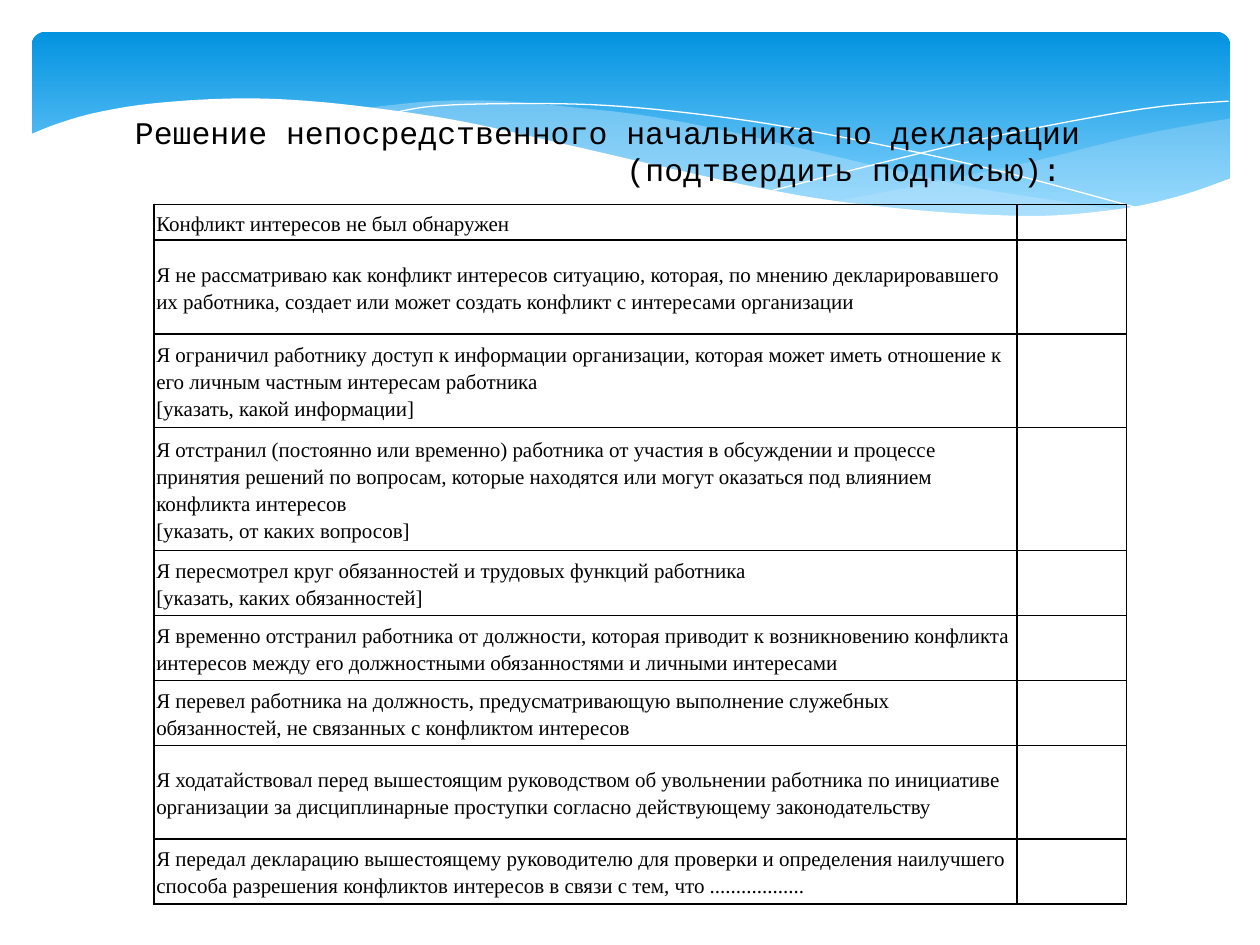
from lxml.etree import SubElement
from pptx import Presentation
from pptx.dml.color import RGBColor
from pptx.enum.shapes import MSO_SHAPE as Preset
from pptx.enum.text import MSO_ANCHOR as Anchor
from pptx.oxml import parse_xml
from pptx.oxml.ns import nsdecls, qn
from pptx.util import Cm, Pt

COLORS = {"deep": "0293E0", "sky": "83D3FE", "pale": "C6E7FC", "white": "FFFFFF", "ink": "000000"}

# Wave edges in cm from the top left corner of the banner
RIGHT_WAVE_TOP = [(24.16, 1.75), (23.11, 1.93), (22, 2.16), (20.5, 2.54), (19.15, 2.84),
                  (17.88, 3.1), (16.15, 3.43)]
RIGHT_WAVE_BOTTOM = [(16.15, 3.43), (17.27, 3.56), (18.29, 3.66), (19.76, 3.73), (20.8, 3.71),
                     (21.95, 3.58), (23.11, 3.33), (24.16, 2.95)]
MIDDLE_WAVE_TOP = [(22.05, 3.61), (20.62, 3.4), (19.05, 3.15), (17.3, 2.77), (15.34, 2.31),
                   (13.82, 1.96), (12.42, 1.7), (11.18, 1.55), (9.5, 1.4), (8.1, 1.4), (6.63, 1.55)]
MIDDLE_WAVE_BOTTOM = [(6.63, 1.55), (8.05, 1.75), (9.63, 2.06), (11.84, 2.57), (13.74, 3),
                      (15.47, 3.33), (17.02, 3.56), (18.69, 3.71), (20.14, 3.76), (21.13, 3.71),
                      (22.05, 3.61)]
FALLING_LINE = [(7.21, 1.65), (8.1, 1.5), (9.55, 1.45), (11.28, 1.47), (12.9, 1.6), (14.81, 1.85),
                (17.02, 2.26), (19.56, 2.82), (22.4, 3.58)]
RISING_LINE = [(14.94, 3.2), (17.02, 2.67), (19.08, 2.18), (21.36, 1.73), (22.83, 1.5), (24.13, 1.4)]
WHITE_WAVE_TOP = [(24.18, 2.95), (23.24, 3.28), (22.2, 3.53), (20.96, 3.68), (19.91, 3.71),
                  (18.26, 3.63), (16.33, 3.43), (14.68, 3.15), (12.8, 2.74), (10.72, 2.26),
                  (8.64, 1.8), (6.78, 1.52), (5.21, 1.37), (3.86, 1.35), (2.39, 1.45), (1.3, 1.63),
                  (0.53, 1.85), (-0.05, 2.08)]
WHITE_WAVE_BASE = [(-0.05, 5.05), (24.18, 5.05)]

# Row height in cm and the paragraphs of its first cell
DECISIONS = [
    (0.72, ["Конфликт интересов не был обнаружен"]),
    (1.89, ["Я не рассматриваю как конфликт интересов ситуацию, которая, по мнению декларировавшего "
            "их работника, создает или может создать конфликт с интересами организации"]),
    (1.89, ["Я ограничил работнику доступ к информации организации, которая может иметь отношение к "
            "его личным частным интересам работника", "[указать, какой информации]"]),
    (2.48, ["Я отстранил (постоянно или временно) работника от участия в обсуждении и процессе "
            "принятия решений по вопросам, которые находятся или могут оказаться под влиянием "
            "конфликта интересов", "[указать, от каких вопросов]"]),
    (1.31, ["Я пересмотрел круг обязанностей и трудовых функций работника",
            "[указать, каких обязанностей]"]),
    (1.31, ["Я временно отстранил работника от должности, которая приводит к возникновению конфликта "
            "интересов между его должностными обязанностями и личными интересами"]),
    (1.31, ["Я перевел работника на должность, предусматривающую выполнение служебных "
            "обязанностей, не связанных с конфликтом интересов"]),
    (1.88, ["Я ходатайствовал перед вышестоящим руководством об увольнении работника по инициативе "
            "организации за дисциплинарные проступки согласно действующему законодательству"]),
    (1.31, ["Я передал декларацию вышестоящему руководителю для проверки и определения наилучшего "
            "способа разрешения конфликтов интересов в связи с тем, что .................."]),
]


def rgb(name):
    return RGBColor.from_string(COLORS[name])


def smooth(points, steps=6):
    """Catmull-Rom curve through the points."""
    ends = [points[0], *points, points[-1]]
    curve = [points[0]]
    for a, b, c, d in zip(ends, ends[1:], ends[2:], ends[3:]):
        for step in range(1, steps + 1):
            t = step / steps
            curve.append(tuple(
                (2 * q + (r - p) * t + (2 * p - 5 * q + 4 * r - s) * t ** 2
                 + (3 * q - p - 3 * r + s) * t ** 3) / 2
                for p, q, r, s in zip(a, b, c, d)))
    return curve


def add_outline(page, left, top, points, close):
    start, *rest = [(Cm(left + x), Cm(top + y)) for x, y in points]
    builder = page.shapes.build_freeform(*start)
    builder.add_line_segments(rest, close=close)
    shape = builder.convert_to_shape()
    shape.shadow.inherit = False
    return shape


def add_wave(page, left, top, points, color, opacity=100):
    wave = add_outline(page, left, top, points, close=True)
    wave.fill.solid()
    wave.fill.fore_color.rgb = rgb(color)
    wave.line.fill.background()
    if opacity < 100:
        tint = wave.fill._xPr.find(".//" + qn("a:srgbClr"))
        SubElement(tint, qn("a:alpha"), val=str(opacity * 1000))


def add_banner(page, left, top, width, height):
    box = page.shapes.add_shape(Preset.ROUNDED_RECTANGLE, Cm(left), Cm(top), Cm(width), Cm(height))
    box.adjustments[0] = 0.07
    box.shadow.inherit = False
    box.line.fill.background()
    box.fill.gradient()
    box.fill.gradient_angle = 270
    for stop, color, position in zip(box.fill.gradient_stops, ("deep", "sky"), (0, 0.9)):
        stop.color.rgb = rgb(color)
        stop.position = position

    add_wave(page, left, top, smooth(RIGHT_WAVE_TOP) + smooth(RIGHT_WAVE_BOTTOM), "pale", 29)
    add_wave(page, left, top, smooth(MIDDLE_WAVE_TOP) + smooth(MIDDLE_WAVE_BOTTOM), "pale", 40)
    for points in (FALLING_LINE, RISING_LINE):
        curve = add_outline(page, left, top, smooth(points), close=False)
        curve.fill.background()
        curve.line.color.rgb = rgb("white")
        curve.line.width = Pt(0)
    add_wave(page, left, top, smooth(WHITE_WAVE_TOP) + WHITE_WAVE_BASE, "white")


def add_span(para, text, font, size):
    span = para.add_run()
    span.text = text
    span.font.name = font
    span.font.size = Pt(size)
    span.font.color.rgb = rgb("ink")


def add_title(page, left, top, width, height):
    box = page.shapes.add_textbox(Cm(left), Cm(top), Cm(width), Cm(height))
    frame = box.text_frame
    frame.word_wrap = True
    frame.vertical_anchor = Anchor.TOP
    frame.margin_top = Cm(0.34)
    frame.margin_right = 0
    lines = [("Решение непосредственного начальника по декларации", 0.97),
             ("(подтвердить подписью):", 10.88)]
    for index, (text, indent) in enumerate(lines):
        para = frame.add_paragraph() if index else frame.paragraphs[0]
        para._p.get_or_add_pPr().set("indent", str(Cm(indent)))
        add_span(para, text, "Courier New", 18)


def style_cell(cell):
    cell.margin_left = cell.margin_right = Cm(0.05)
    cell.margin_top = cell.margin_bottom = Cm(0.08)
    cell.vertical_anchor = Anchor.MIDDLE
    props = cell._tc.get_or_add_tcPr()
    for side in ("lnL", "lnR", "lnT", "lnB"):
        props.append(parse_xml(
            f'<a:{side} {nsdecls("a")} w="{Pt(1)}"><a:solidFill>'
            f'<a:srgbClr val="{COLORS["ink"]}"/></a:solidFill></a:{side}>'))
    cell.fill.background()


def add_decisions(page, left, top, widths):
    height = sum(row_height for row_height, _ in DECISIONS)
    frame = page.shapes.add_table(len(DECISIONS), len(widths), Cm(left), Cm(top),
                                  Cm(sum(widths)), Cm(height))
    table = frame.table
    table.first_row = table.horz_banding = False
    for column, width in zip(table.columns, widths):
        column.width = Cm(width)
    for row, (row_height, texts) in zip(table.rows, DECISIONS):
        row.height = Cm(row_height)
        answer, signature = row.cells
        style_cell(answer)
        style_cell(signature)
        for index, text in enumerate(texts):
            para = answer.text_frame.add_paragraph() if index else answer.text_frame.paragraphs[0]
            para.line_spacing = 1.15
            add_span(para, text, "Times New Roman", 12)
        SubElement(signature.text_frame.paragraphs[0]._p, qn("a:endParaRPr"), sz="1200")


def main():
    deck = Presentation()
    deck.slide_width, deck.slide_height = Cm(25.4), Cm(19.05)
    page = deck.slides.add_slide(deck.slide_layouts[6])
    add_banner(page, 0.64, 0.64, 24.16, 3.96)
    add_decisions(page, 3.1, 4.12, [17.4, 2.21])
    add_title(page, 1.5, 1.93, 20.62, 3.25)
    deck.save("out.pptx")


if __name__ == "__main__":
    main()
